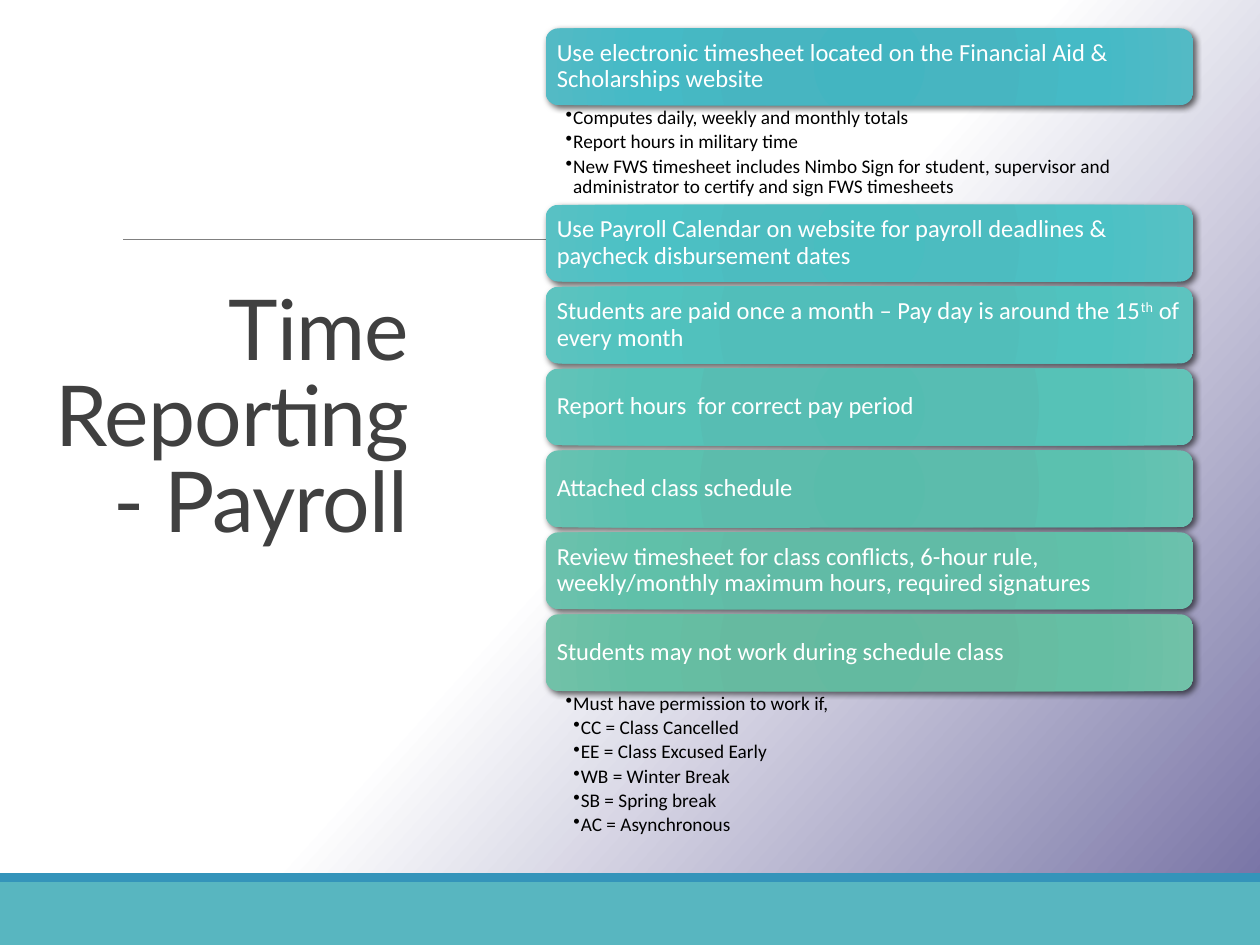
from dataclasses import dataclass

from lxml.etree import SubElement
from pptx import Presentation
from pptx.dml.color import RGBColor
from pptx.enum.shapes import MSO_CONNECTOR as Connector, MSO_SHAPE as Shape
from pptx.enum.text import MSO_ANCHOR as Anchor, MSO_AUTO_SIZE as AutoSize, PP_ALIGN as Align
from pptx.oxml.ns import qn
from pptx.util import Inches, Pt


@dataclass(frozen=True)
class Theme:
    """Colours, fonts and type sizes of the slide."""
    title_font: str = "Lato"
    body_font: str = "Calibri"
    title_size: float = 48
    card_size: float = 14
    detail_size: float = 11
    title_color: str = "404040"
    card_color: str = "FFFFFF"
    detail_color: str = "000000"
    rule_color: str = "808080"
    band_color: str = "58B6C0"
    stripe_color: str = "3494BA"
    shadow_color: str = "000000"
    background: tuple = ("FFFFFF", "FFFFFF", "716DA1")
    background_stops: tuple = (0, 50, 100)
    card_stops: tuple = (0, 34, 70, 100)


@dataclass(frozen=True)
class Box:
    """A rectangle in inches."""
    left: float
    top: float
    width: float
    height: float

    def share(self, left, top, width, height):
        """Return the box covering the given shares of this one."""
        return Box(self.left + left * self.width, self.top + top * self.height,
                   width * self.width, height * self.height)

    def emu(self):
        """Return left, top, width and height as lengths."""
        return [Inches(v) for v in (self.left, self.top, self.width, self.height)]


THEME = Theme()
PAGE = Box(0, 0, 10, 7.5)
CARD_HEIGHT, CARD_GAP = 0.61, 0.04

CARDS = [
    (["Use electronic timesheet located on the Financial Aid & Scholarships website"],
     ("43B5C1", "47B5C1", "45BAC6", "53BAC5"),
     [(1, "Computes daily, weekly and monthly totals"),
      (1, "Report hours in military time"),
      (1, "New FWS timesheet includes Nimbo Sign for student, supervisor and "
          "administrator to certify and sign FWS timesheets")], 0.79),
    (["Use Payroll Calendar on website for payroll deadlines & paycheck disbursement dates"],
     ("49BDC0", "4CBCC0", "4BC1C5", "58C1C4"), [], CARD_GAP),
    (["Students are paid once a month – Pay day is around the 15", "th", " of every month"],
     ("4EBFBA", "51BEBA", "50C3BF", "5DC3BF"), [], CARD_GAP),
    (["Report hours  for correct pay period"],
     ("54BDB2", "57BDB3", "56C2B7", "62C3B8"), [], CARD_GAP),
    (["Attached class schedule"],
     ("59BCAB", "5CBCAC", "5BC1AF", "68C2B2"), [], CARD_GAP),
    (["Review timesheet for class conflicts, 6-hour rule, "
      "weekly/monthly maximum hours, required signatures"],
     ("5EBBA5", "61BBA6", "60C0A9", "6CC1AD"), [], CARD_GAP),
    (["Students may not work during schedule class"],
     ("63BAA0", "66BAA0", "65BFA4", "71C1A8"),
     [(1, "Must have permission to work if,"),
      (2, "CC = Class Cancelled"),
      (2, "EE = Class Excused Early"),
      (2, "WB = Winter Break"),
      (2, "SB = Spring break"),
      (2, "AC = Asynchronous")], 1.24),
]


def add_run(paragraph, text, font, size, color):
    """Append a formatted run and return it."""
    run = paragraph.add_run()
    run.text = text
    run.font.name, run.font.size = font, Pt(size)
    run.font.color.rgb = RGBColor.from_string(color)
    return run


def set_frame(frame, anchor, insets):
    """Set wrapping, anchor and insets of a text frame."""
    frame.word_wrap, frame.auto_size, frame.vertical_anchor = True, AutoSize.NONE, anchor
    (frame.margin_left, frame.margin_top,
     frame.margin_right, frame.margin_bottom) = [Inches(v) for v in insets]


def set_gradient(fill, element, positions, colors, angle=None):
    """Give a fill a linear gradient, or a circular one without an angle."""
    fill.gradient()
    gradient = element.find(".//" + qn("a:gradFill"))
    for child in list(gradient):
        gradient.remove(child)
    stops = SubElement(gradient, qn("a:gsLst"))
    for position, color in zip(positions, colors):
        stop = SubElement(stops, qn("a:gs"), pos=str(position * 1000))
        SubElement(stop, qn("a:srgbClr"), val=color)
    if angle is None:
        circle = SubElement(gradient, qn("a:path"), {"path": "circle"})
        SubElement(circle, qn("a:fillToRect"), {side: "100000" for side in "ltrb"})
    else:
        SubElement(gradient, qn("a:lin"), ang=str(angle * 60000), scaled="0")


def add_shadow(shape):
    """Add a soft shadow to the lower right."""
    shape.shadow.inherit = False
    effects = shape.element.spPr.find(qn("a:effectLst"))
    shadow = SubElement(effects, qn("a:outerShdw"), blurRad=str(Pt(3.5)), dist=str(Pt(2)),
                        dir=str(45 * 60000), algn="tl", rotWithShape="0")
    color = SubElement(shadow, qn("a:srgbClr"), val=THEME.shadow_color)
    SubElement(color, qn("a:alpha"), val="60000")


def add_backdrop(slide, box):
    """Draw the background, the footer bands and the rule."""
    set_gradient(slide.background.fill, slide.element, THEME.background_stops,
                 THEME.background, angle=42)
    for top, height, color in ((14 / 15, 1 / 15, THEME.band_color),
                               (0.924, 0.0093, THEME.stripe_color)):
        band = slide.shapes.add_shape(Shape.RECTANGLE, *box.share(0, top, 1, height).emu())
        band.shadow.inherit = False
        band.fill.solid()
        band.fill.fore_color.rgb = RGBColor.from_string(color)
        band.line.fill.background()
    left, top, width, _ = box.share(0.098, 0.2533, 0.817, 0).emu()
    rule = slide.shapes.add_connector(Connector.STRAIGHT, left, top, left + width, top)
    rule.line.width = Pt(0.5)
    rule.line.color.rgb = RGBColor.from_string(THEME.rule_color)
    SubElement(rule.element.spPr, qn("a:effectLst"))


def add_title(slide, box):
    """Place and format the slide title."""
    title = slide.shapes.title
    title.left, title.top, title.width, title.height = box.emu()
    set_frame(title.text_frame, Anchor.BOTTOM, (0.1, 0.05, 0.1, 0.05))
    paragraph = title.text_frame.paragraphs[0]
    paragraph.alignment, paragraph.line_spacing = Align.RIGHT, 0.85
    run = add_run(paragraph, "Time Reporting - Payroll", THEME.title_font,
                  THEME.title_size, THEME.title_color)
    run.font._element.set("spc", "-50")


def add_card(slide, box, texts, colors):
    """Draw one rounded card, with every second run raised."""
    card = slide.shapes.add_shape(Shape.ROUNDED_RECTANGLE, *box.emu())
    set_gradient(card.fill, card.element, THEME.card_stops, colors)
    card.line.fill.background()
    add_shadow(card)
    set_frame(card.text_frame, Anchor.MIDDLE, (0.06, 0.06, 0.06, 0.06))
    paragraph = card.text_frame.paragraphs[0]
    paragraph.alignment, paragraph.line_spacing = Align.LEFT, 0.9
    for index, text in enumerate(texts):
        run = add_run(paragraph, text, THEME.body_font, THEME.card_size, THEME.card_color)
        if index % 2:
            run.font._element.set("baseline", "30000")


def add_details(slide, box, details):
    """Write the bulleted details under a card."""
    frame = slide.shapes.add_textbox(*box.emu()).text_frame
    set_frame(frame, Anchor.TOP, (0.16, 0.02, 0.11, 0.02))
    for index, (level, text) in enumerate(details):
        paragraph = frame.add_paragraph() if index else frame.paragraphs[0]
        paragraph.level, paragraph.line_spacing, paragraph.space_after = level, 0.9, Pt(2)
        properties = paragraph._p.get_or_add_pPr()
        properties.set("marL", str(Inches(0.06 * level)))
        properties.set("indent", str(Inches(-0.06)))
        SubElement(properties, qn("a:buChar"), char="•")
        add_run(paragraph, text, THEME.body_font, THEME.detail_size, THEME.detail_color)


def add_card_list(slide, box):
    """Stack the cards and their details down the box."""
    top = box.top
    for texts, colors, details, space in CARDS:
        add_card(slide, Box(box.left, top, box.width, CARD_HEIGHT), texts, colors)
        top += CARD_HEIGHT
        if details:
            add_details(slide, Box(box.left, top, box.width, space), details)
        top += space


def main():
    """Build and save the presentation."""
    presentation = Presentation()
    presentation.slide_width, presentation.slide_height = Inches(PAGE.width), Inches(PAGE.height)
    slide = presentation.slides.add_slide(presentation.slide_layouts[5])
    add_backdrop(slide, PAGE)
    add_title(slide, PAGE.share(0.017, 0.2, 0.317, 0.388))
    add_card_list(slide, PAGE.share(0.433, 0.03, 0.514, 0.868))
    presentation.save("out.pptx")


if __name__ == "__main__":
    main()
